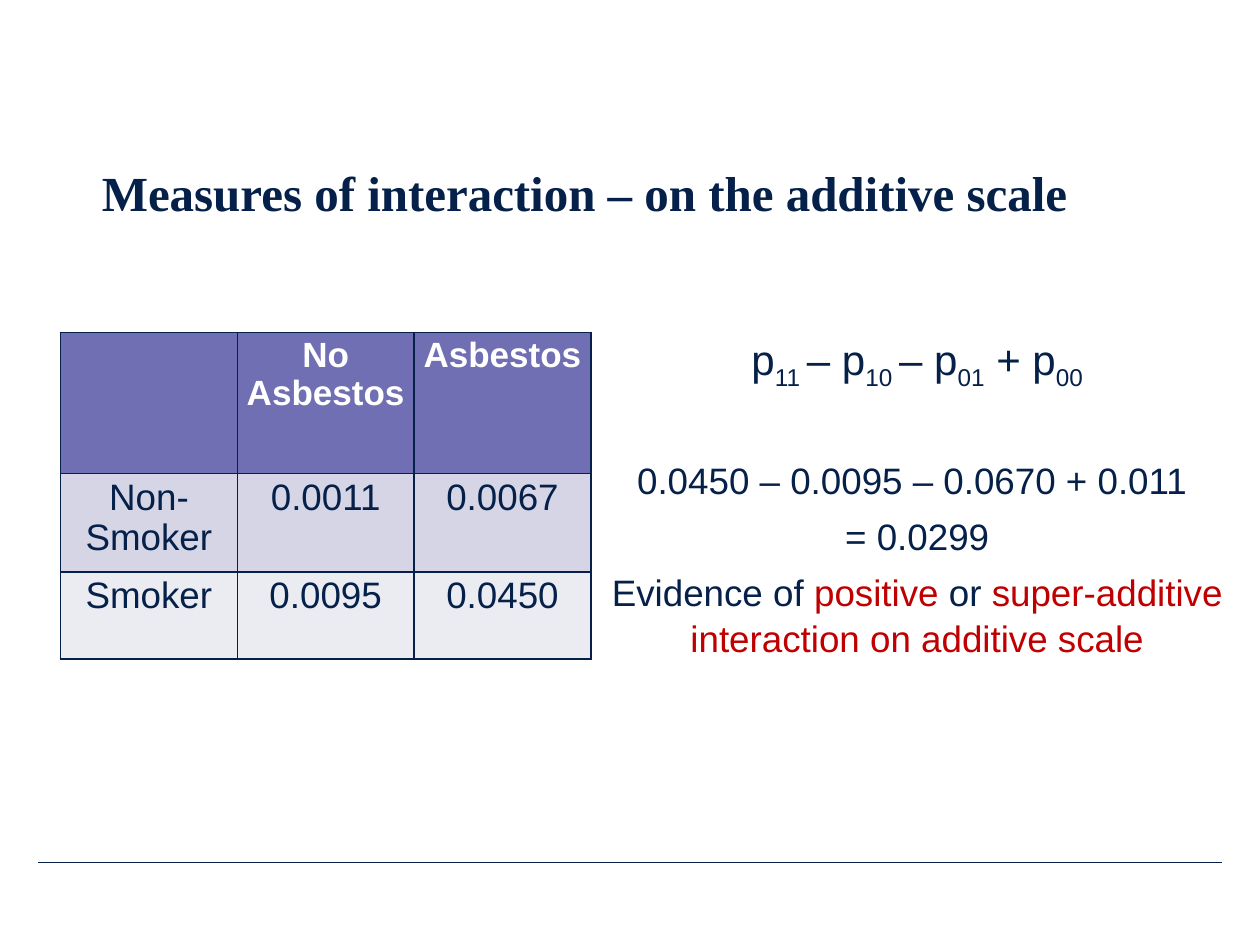
"""Build a slide on measures of interaction on the additive scale."""
from lxml import etree
from pptx import Presentation
from pptx.dml.color import RGBColor
from pptx.enum import shapes, text
from pptx.oxml import ns
from pptx.util import Inches, Pt

NAVY = RGBColor(0x05, 0x20, 0x49)
RED = RGBColor(0xC0, 0x00, 0x00)
WHITE = RGBColor(0xFF, 0xFF, 0xFF)
PURPLE = RGBColor(0x71, 0x6F, 0xB3)
LILAC = RGBColor(0xD5, 0xD5, 0xE5)
PALE = RGBColor(0xEB, 0xEB, 0xF2)

ROWS = [
    ("", "No Asbestos", "Asbestos"),
    ("Non-Smoker", "0.0011", "0.0067"),
    ("Smoker", "0.0095", "0.0450"),
]
ROW_HEIGHTS = (1.12, 0.78, 0.69)
ROW_FILLS = (PURPLE, LILAC, PALE)
TABLE_WIDTH = 4.21
FORMULA = [("p", "11 "), ("– p", "10 "), ("– p", "01"), (" + p", "00")]


def add_span(para, words, size=21, color=NAVY, font="Arial", bold=False, subscript=False):
    span = para.add_run()
    span.text = words
    span.font.size = Pt(size)
    span.font.name = font
    span.font.bold = bold
    span.font.color.rgb = color
    if subscript:
        span._r.get_or_add_rPr().set("baseline", "-25000")


def add_box(page, left, top, width, height, anchor=text.MSO_ANCHOR.TOP):
    box = page.shapes.add_textbox(Inches(left), Inches(top), Inches(width), Inches(height))
    box.text_frame.word_wrap = True
    box.text_frame.vertical_anchor = anchor
    return box.text_frame


def add_title(page, words):
    frame = add_box(page, 0.71, 1.3, 8.85, 0.51, text.MSO_ANCHOR.BOTTOM)
    para = frame.paragraphs[0]
    para.line_spacing = 0.85
    add_span(para, words, size=28, font="Times New Roman", bold=True)


def center_para(para, before=0):
    para.alignment = text.PP_ALIGN.CENTER
    para.line_spacing = 1.04
    para.space_before = Pt(before)
    para.space_after = Pt(6)
    return para


def add_calculation(page):
    frame = add_box(page, 4.6, 2.58, 5.36, 3.29)
    formula = center_para(frame.paragraphs[0])
    for symbol, index in FORMULA:
        add_span(formula, symbol, size=24)
        add_span(formula, index, size=24, subscript=True)
    add_span(center_para(frame.add_paragraph(), before=31), "0.0450 – 0.0095 – 0.0670 + 0.011 ")
    add_span(center_para(frame.add_paragraph()), "= 0.0299")
    evidence = center_para(frame.add_paragraph())
    add_span(evidence, "Evidence of ")
    add_span(evidence, "positive", color=RED)
    add_span(evidence, " or ")
    add_span(evidence, "super-additive interaction on additive scale", color=RED)


def add_borders(cell, color=NAVY, width=1):
    props = cell._tc.get_or_add_tcPr()
    for position, side in enumerate(("lnL", "lnR", "lnT", "lnB")):
        line = etree.Element(ns.qn(f"a:{side}"), w=str(Pt(width)))
        fill = etree.SubElement(line, ns.qn("a:solidFill"))
        etree.SubElement(fill, ns.qn("a:srgbClr"), val=str(color))
        props.insert(position, line)


def fill_cell(cell, words, fill, **style):
    cell.fill.solid()
    cell.fill.fore_color.rgb = fill
    cell.margin_left = cell.margin_right = Inches(0.07)
    cell.margin_top = cell.margin_bottom = Inches(0.04)
    add_borders(cell)
    if words:
        para = cell.text_frame.paragraphs[0]
        para.alignment = text.PP_ALIGN.CENTER
        para.line_spacing = 0.97
        add_span(para, words, **style)


def add_risk_table(page):
    frame = page.shapes.add_table(len(ROWS), len(ROWS[0]), Inches(0.48), Inches(2.64),
                                  Inches(TABLE_WIDTH), Inches(sum(ROW_HEIGHTS)))
    table = frame.table
    for row, height in zip(table.rows, ROW_HEIGHTS):
        row.height = Inches(height)
    for number, (values, fill) in enumerate(zip(ROWS, ROW_FILLS)):
        style = {"size": 20, "color": WHITE, "bold": True} if number == 0 else {}
        for column, words in enumerate(values):
            fill_cell(table.cell(number, column), words, fill, **style)


def add_rule(page, left, right, top):
    rule = page.shapes.add_connector(shapes.MSO_CONNECTOR.STRAIGHT, Inches(left), Inches(top),
                                     Inches(right), Inches(top))
    rule.line.color.rgb = NAVY
    rule.line.width = Pt(0.25)
    etree.SubElement(rule._element.spPr, ns.qn("a:effectLst"))


def main():
    deck = Presentation()
    deck.slide_width, deck.slide_height = Inches(10), Inches(7.5)
    page = deck.slides.add_slide(deck.slide_layouts[6])
    add_rule(page, 0.3, 9.7, 6.84)
    add_title(page, "Measures of interaction – on the additive scale")
    add_calculation(page)
    add_risk_table(page)
    deck.save("out.pptx")


if __name__ == "__main__":
    main()
